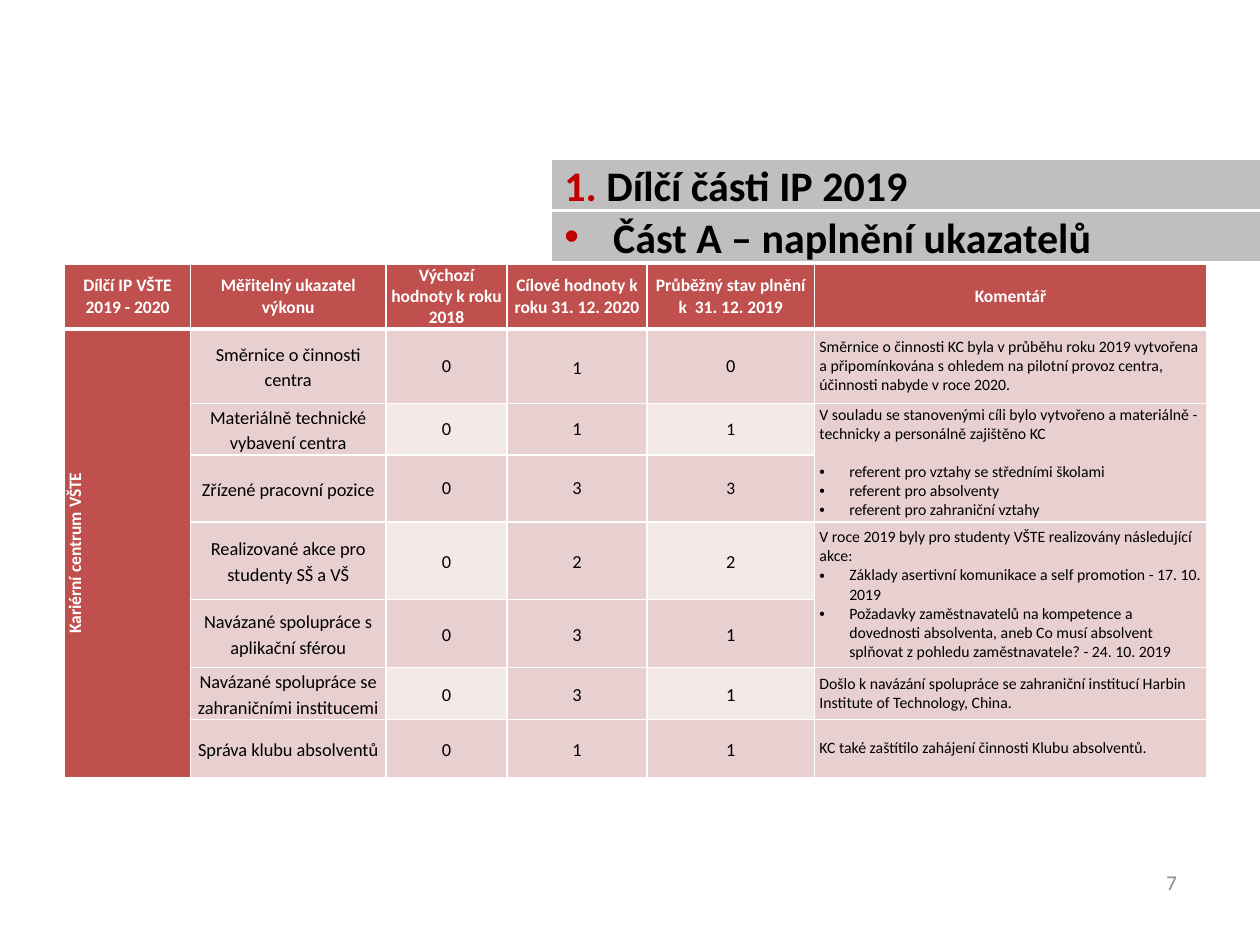
from lxml import etree
from pptx import Presentation
from pptx.dml.color import RGBColor
from pptx.enum.shapes import MSO_SHAPE
from pptx.enum.text import MSO_ANCHOR, PP_ALIGN
from pptx.oxml.ns import qn
from pptx.util import Cm, Pt

RECTANGLE = MSO_SHAPE.RECTANGLE
MIDDLE = MSO_ANCHOR.MIDDLE
LEFT, CENTER, RIGHT = PP_ALIGN.LEFT, PP_ALIGN.CENTER, PP_ALIGN.RIGHT

RED, ROSE, PALE = "C0504D", "E8D0D0", "F4E9E9"
WHITE, BLACK, GREY, ACCENT, MUTED = "FFFFFF", "000000", "BFBFBF", "C00000", "8C8C8C"

# Content
HEADINGS = [  # top in cm, bulleted, coloured runs
    (3.23, False, [("1. ", ACCENT), ("Dílčí části IP 2019", BLACK)]),
    (4.27, True, [("Část A – naplnění ukazatelů", BLACK)]),
]
COLUMN_TITLES = ["Dílčí IP VŠTE 2019 - 2020", "Měřitelný ukazatel výkonu",
                 "Výchozí hodnoty k roku 2018", "Cílové hodnoty k roku 31. 12. 2020",
                 "Průběžný stav plnění k  31. 12. 2019", "Komentář"]
CENTRE_NAME = "Kariérní centrum VŠTE"
INDICATORS = [  # indicator, baseline, target, progress
    ("Směrnice o činnosti centra", "0", "1", "0"),
    ("Materiálně technické vybavení centra", "0", "1", "1"),
    ("Zřízené pracovní pozice", "0", "3", "3"),
    ("Realizované akce pro studenty SŠ a VŠ", "0", "2", "2"),
    ("Navázané spolupráce s aplikační sférou", "0", "3", "1"),
    ("Navázané spolupráce se zahraničními institucemi", "0", "3", "1"),
    ("Správa klubu absolventů", "0", "1", "1"),
]
COMMENTS = [  # first row, rows spanned, lead text, bullets, gap before bullets in pt
    (1, 1, "Směrnice o činnosti KC byla v průběhu roku 2019 vytvořena a připomínkována "
           "s ohledem na pilotní provoz centra, účinnosti nabyde v roce 2020.", [], 0),
    (2, 2, "V souladu se stanovenými cíli bylo vytvořeno a materiálně - technicky "
           "a personálně zajištěno KC",
     ["referent pro vztahy se středními školami", "referent pro absolventy",
      "referent pro zahraniční vztahy"], 11),
    (4, 2, "V roce 2019 byly pro studenty VŠTE realizovány následující akce:",
     ["Základy asertivní komunikace a self promotion - 17. 10. 2019",
      "Požadavky zaměstnavatelů na kompetence a dovednosti absolventa, aneb Co musí "
      "absolvent splňovat z pohledu zaměstnavatele? - 24. 10. 2019"], 0),
    (6, 1, "Došlo k navázání spolupráce se zahraniční institucí "
           "Harbin Institute of Technology, China.", [], 0),
    (7, 1, "KC také zaštítilo zahájení činnosti Klubu absolventů.", [], 0),
]
PAGE_NUMBER = "7"

# Layout in cm
COLUMN_WIDTHS = [2.54, 3.94, 2.44, 2.82, 3.38, 7.9]
ROW_HEIGHTS = [1.3, 1.5, 1.04, 1.35, 1.57, 1.37, 1.04, 1.17]
TABLE_LEFT, TABLE_TOP = 1.3, 5.33
HEADING_LEFT, HEADING_WIDTH, HEADING_HEIGHT = 11.13, 14.27, 0.99
HEADING_INDENT, COMMENT_INDENT = 0.98, 0.6
INDICATOR_COLUMN, PROGRESS_COLUMN, COMMENT_COLUMN = 1, 4, 5
BANDED_COLUMNS = (2, 4)

# Text formats
HEADER_TEXT = {"size": Pt(10), "bold": True, "color": WHITE}
VALUE_TEXT = {"size": Pt(10.5), "bold": False, "color": BLACK}
SMALL_VALUE_TEXT = {**VALUE_TEXT, "size": Pt(10)}
COMMENT_TEXT = {**VALUE_TEXT, "size": Pt(9)}
HEADING_TEXT = {"size": Pt(24), "bold": True}
PAGE_TEXT = {"size": Pt(12), "bold": False, "color": MUTED}


def rgb(value):
    return RGBColor.from_string(value)


def paint(part, color):
    part.fill.solid()
    part.fill.fore_color.rgb = rgb(color)


def write(paragraph, text, text_format, align=LEFT):
    paragraph.alignment = align
    run = paragraph.add_run()
    run.text = text
    for name, value in {"name": "Calibri", **text_format}.items():
        if name == "color":
            run.font.color.rgb = rgb(value)
        else:
            setattr(run.font, name, value)


def add_bullet(paragraph, indent, color):
    properties = paragraph._p.get_or_add_pPr()
    properties.set("marL", str(Cm(indent)))
    properties.set("indent", str(-Cm(indent)))
    bullet_color = etree.SubElement(properties, qn("a:buClr"))
    etree.SubElement(bullet_color, qn("a:srgbClr"), val=color)
    etree.SubElement(properties, qn("a:buFont"), typeface="Arial")
    etree.SubElement(properties, qn("a:buChar"), char="•")


def style_cell(cell, color, inset, bottom_width=1):
    cell.vertical_anchor = MIDDLE
    cell.margin_left = cell.margin_right = Cm(inset)
    cell.margin_top = cell.margin_bottom = 0
    properties = cell._tc.get_or_add_tcPr()
    for side, width in (("L", 1), ("R", 1), ("T", 1), ("B", bottom_width)):
        line = etree.SubElement(properties, qn("a:ln" + side), w=str(Pt(width)))
        line_fill = etree.SubElement(line, qn("a:solidFill"))
        etree.SubElement(line_fill, qn("a:srgbClr"), val=WHITE)
    paint(cell, color)


def cell_look(row, column):
    if row == 0 or column == 0:
        return RED
    return PALE if column in BANDED_COLUMNS and row % 2 == 0 and row else ROSE


def add_indicator_table(slide):
    table = slide.shapes.add_table(
        len(ROW_HEIGHTS), len(COLUMN_WIDTHS), Cm(TABLE_LEFT), Cm(TABLE_TOP),
        Cm(sum(COLUMN_WIDTHS)), Cm(sum(ROW_HEIGHTS))).table
    for column, width in zip(table.columns, COLUMN_WIDTHS):
        column.width = Cm(width)
    for row, height in zip(table.rows, ROW_HEIGHTS):
        row.height = Cm(height)
    for row in range(len(ROW_HEIGHTS)):
        for column in range(len(COLUMN_WIDTHS)):
            inset = 0.03 if row and column == PROGRESS_COLUMN else 0.1
            style_cell(table.cell(row, column), cell_look(row, column), inset,
                       bottom_width=1 if row else 3)

    # Header row and the vertical centre name
    for column, title in enumerate(COLUMN_TITLES):
        write(table.cell(0, column).text_frame.paragraphs[0], title, HEADER_TEXT, CENTER)
    centre = table.cell(1, 0)
    centre.merge(table.cell(len(INDICATORS), 0))
    centre._tc.get_or_add_tcPr().set("vert", "vert270")
    write(centre.text_frame.paragraphs[0], CENTRE_NAME, HEADER_TEXT, CENTER)

    # Indicators with their values
    for row, values in enumerate(INDICATORS, 1):
        for column, value in enumerate(values, INDICATOR_COLUMN):
            paragraph = table.cell(row, column).text_frame.paragraphs[0]
            small = column == PROGRESS_COLUMN and row in (2, 3)
            write(paragraph, value, SMALL_VALUE_TEXT if small else VALUE_TEXT, CENTER)
            if column == INDICATOR_COLUMN or row >= 4 or (row, column) == (1, 3):
                paragraph.line_spacing = 1.15

    # Comments
    for row, span, lead, bullets, gap in COMMENTS:
        cell = table.cell(row, COMMENT_COLUMN)
        if span > 1:
            cell.merge(table.cell(row + span - 1, COMMENT_COLUMN))
        write(cell.text_frame.paragraphs[0], lead, COMMENT_TEXT)
        for index, text in enumerate(bullets):
            paragraph = cell.text_frame.add_paragraph()
            add_bullet(paragraph, COMMENT_INDENT, BLACK)
            if gap and index == 0:
                paragraph.space_before = Pt(gap)
            write(paragraph, text, COMMENT_TEXT)


def add_heading(slide, top, bulleted, runs):
    bar = slide.shapes.add_shape(RECTANGLE, Cm(HEADING_LEFT), Cm(top),
                                 Cm(HEADING_WIDTH), Cm(HEADING_HEIGHT))
    bar.shadow.inherit = False
    paint(bar, GREY)
    bar.line.fill.background()
    bar.text_frame.word_wrap = True
    bar.text_frame.vertical_anchor = MIDDLE
    paragraph = bar.text_frame.paragraphs[0]
    if bulleted:
        add_bullet(paragraph, HEADING_INDENT, ACCENT)
    for text, color in runs:
        write(paragraph, text, {**HEADING_TEXT, "color": color})


def main():
    deck = Presentation()
    deck.slide_width, deck.slide_height = Cm(25.4), Cm(19.05)
    slide = deck.slides.add_slide(deck.slide_layouts[6])
    add_indicator_table(slide)
    for heading in HEADINGS:
        add_heading(slide, *heading)

    # Page number
    footer = slide.shapes.add_textbox(Cm(18.06), Cm(17.27), Cm(5.92), Cm(1.02)).text_frame
    footer.word_wrap = True
    footer.vertical_anchor = MIDDLE
    write(footer.paragraphs[0], PAGE_NUMBER, PAGE_TEXT, RIGHT)
    deck.save("out.pptx")


if __name__ == "__main__":
    main()
